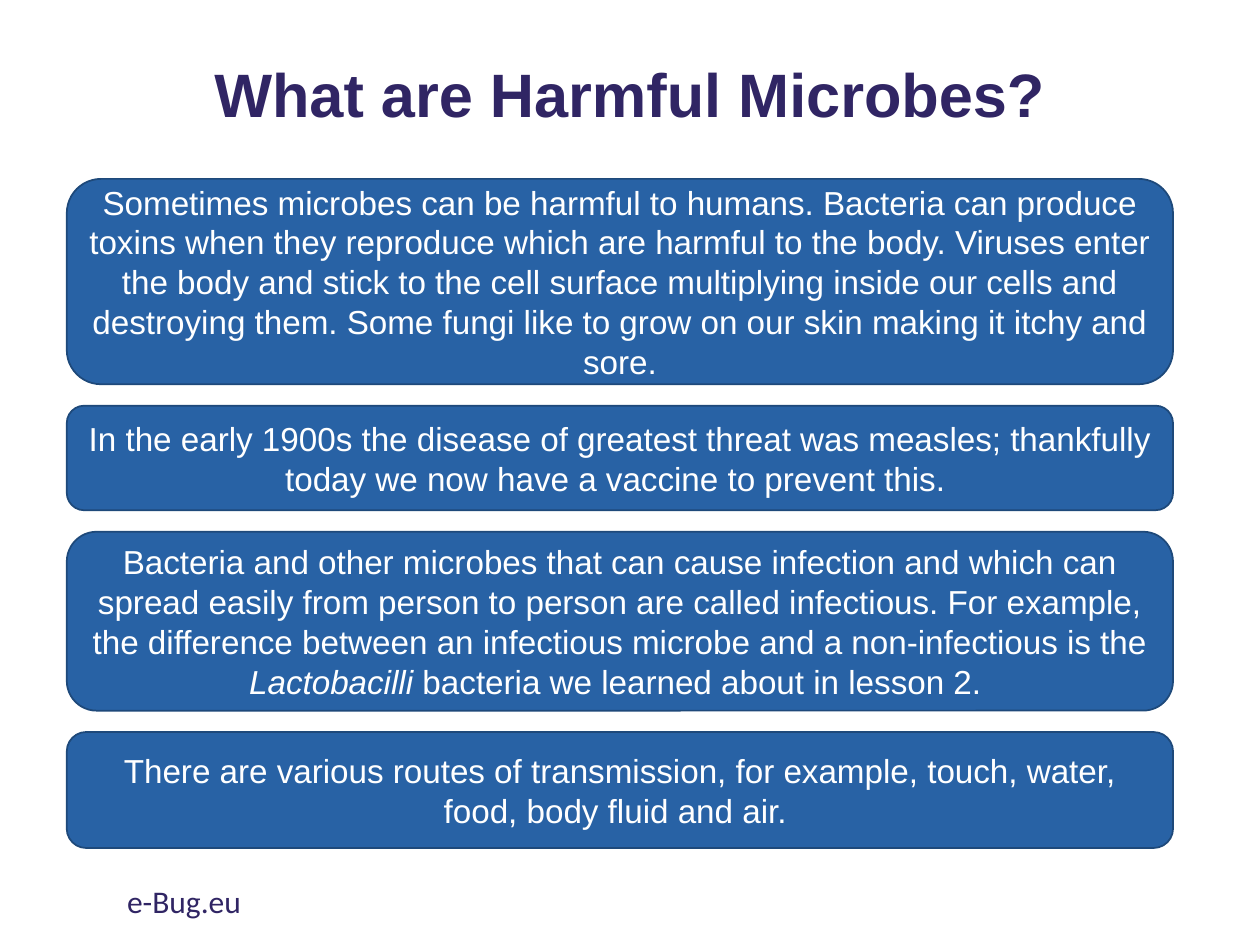
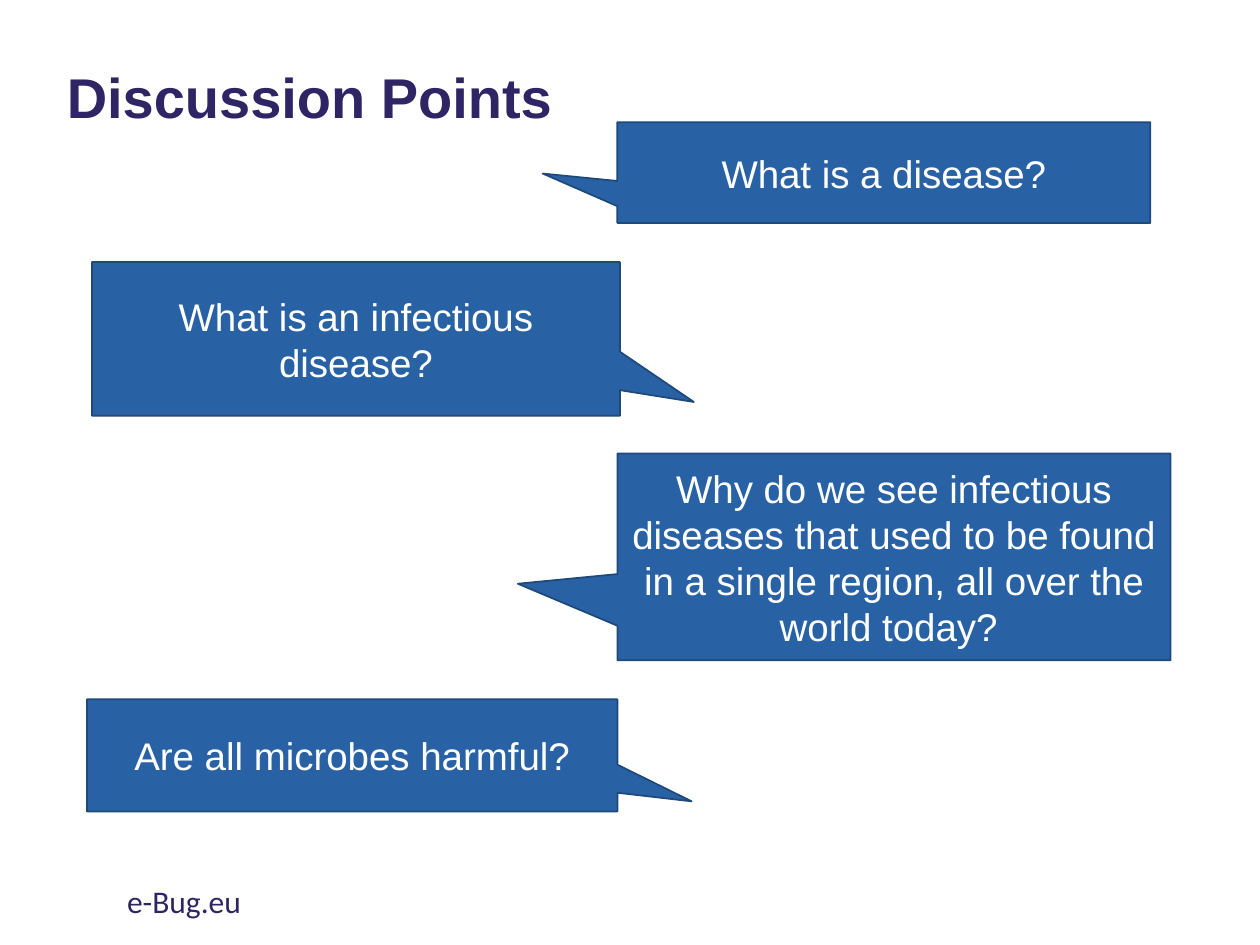
import pptx
import pptx.dml.color
import pptx.enum.shapes
import pptx.enum.text
import pptx.util

Inches = pptx.util.Inches
Align = pptx.enum.text.PP_ALIGN
Anchor = pptx.enum.text.MSO_ANCHOR
Preset = pptx.enum.shapes.MSO_SHAPE

COLOURS = {"background": "FFFFFF", "heading": "302564", "panel": "2862A5",
           "outline": "1E497A", "panel_text": "FFFFFF"}
TITLE_ONLY = 5

# Each statement is a height and its (text, italic) runs
STATEMENTS = [
    (1.63, [("Sometimes microbes can be harmful to humans. Bacteria can produce toxins "
             "when they reproduce which are harmful to the body. Viruses enter the body "
             "and stick to the cell surface multiplying inside our cells and destroying "
             "them. Some fungi like to grow on our skin making it itchy and sore.", False)]),
    (0.83, [("In the early 1900s the disease of greatest threat was measles; thankfully "
             "today we now have a vaccine to prevent this. ", False)]),
    (1.42, [("Bacteria and other microbes that can cause infection and which can spread "
             "easily from person to person are called infectious. For example, the "
             "difference between an infectious microbe and a non-infectious is the ", False),
            ("Lactobacilli", True),
            (" bacteria we learned about in lesson 2. ", False)]),
    (0.92, [("There are various routes of transmission, for example, touch, water, food, "
             "body fluid and air. ", False)]),
]

# Each question is a box, the offset of the callout tip, and the text
QUESTIONS = [
    ((4.9, 0.97, 4.23, 0.8), (-0.64, 0.01), "What is a disease?"),
    ((0.73, 2.08, 4.19, 1.22), (0.64, 0.41), "What is an infectious disease?"),
    ((4.9, 3.6, 4.39, 1.64), (-0.68, 0.13),
     "Why do we see infectious diseases that used to be found in a single region, "
     "all over the world today? "),
    ((0.69, 5.55, 4.21, 0.89), (0.64, 0.41), "Are all microbes harmful?"),
]


def colour(name):
    return pptx.dml.color.RGBColor.from_string(COLOURS[name])


def set_font(paragraph, size, colour_name, name="Arial", bold=None):
    font = paragraph.font
    font.name, font.size, font.bold = name, pptx.util.Pt(size), bold
    font.color.rgb = colour(colour_name)


def add_slide(presentation, title, box, size, alignment):
    """Add a slide with the shared background, title style and footer."""
    slide = presentation.slides.add_slide(presentation.slide_layouts[TITLE_ONLY])
    slide.background.fill.solid()
    slide.background.fill.fore_color.rgb = colour("background")

    # Title
    heading = slide.shapes.title
    heading.left, heading.top, heading.width, heading.height = map(Inches, box)
    frame = heading.text_frame
    frame.text = title
    frame.word_wrap = True
    frame.auto_size = pptx.enum.text.MSO_AUTO_SIZE.NONE
    frame.vertical_anchor = Anchor.MIDDLE
    paragraph = frame.paragraphs[0]
    paragraph.alignment = alignment
    paragraph.line_spacing = 0.9
    set_font(paragraph, size, "heading", bold=True)

    # Footer
    footer = slide.shapes.add_textbox(*map(Inches, (0.91, 6.95, 3.38, 0.4)))
    footer.text_frame.word_wrap = True
    footer.text_frame.text = "e-Bug.eu"
    set_font(footer.text_frame.paragraphs[0], 18, "heading", name="Calibri")
    return slide


def add_panel(slide, preset, box, runs, size):
    """Add a filled shape with centred text."""
    shape = slide.shapes.add_shape(preset, *map(Inches, box))
    shape.shadow.inherit = False
    shape.fill.solid()
    shape.fill.fore_color.rgb = colour("panel")
    shape.line.color.rgb = colour("outline")
    shape.line.width = pptx.util.Pt(1)
    frame = shape.text_frame
    frame.word_wrap = True
    frame.vertical_anchor = Anchor.MIDDLE
    paragraph = frame.paragraphs[0]
    paragraph.alignment = Align.CENTER
    set_font(paragraph, size, "panel_text")
    for text, italic in runs:
        run = paragraph.add_run()
        run.text = text
        if italic:
            run.font.italic = True
    return shape


def add_statements(slide, left, top, width, gap):
    """Stack the statements downwards with equal gaps."""
    for height, runs in STATEMENTS:
        add_panel(slide, Preset.ROUNDED_RECTANGLE, (left, top, width, height), runs, 19)
        top += height + gap


def add_questions(slide):
    """Place the questions as speech callouts on alternating sides."""
    for box, tip, text in QUESTIONS:
        callout = add_panel(slide, Preset.RECTANGULAR_CALLOUT, box, [(text, False)], 22)
        callout.adjustments[0], callout.adjustments[1] = tip


def main():
    presentation = pptx.Presentation()
    presentation.slide_width = Inches(10)
    presentation.slide_height = Inches(7.5)

    harmful_slide = add_slide(presentation, "What are Harmful Microbes?",
                              (0.69, 0.32, 8.62, 0.91), 35, Align.CENTER)
    add_statements(harmful_slide, left=0.53, top=1.42, width=8.78, gap=0.17)

    discussion_slide = add_slide(presentation, "Discussion Points",
                                 (0.43, 0.07, 4.23, 1.45), 32, Align.LEFT)
    add_questions(discussion_slide)

    presentation.save("out.pptx")


if __name__ == "__main__":
    main()
